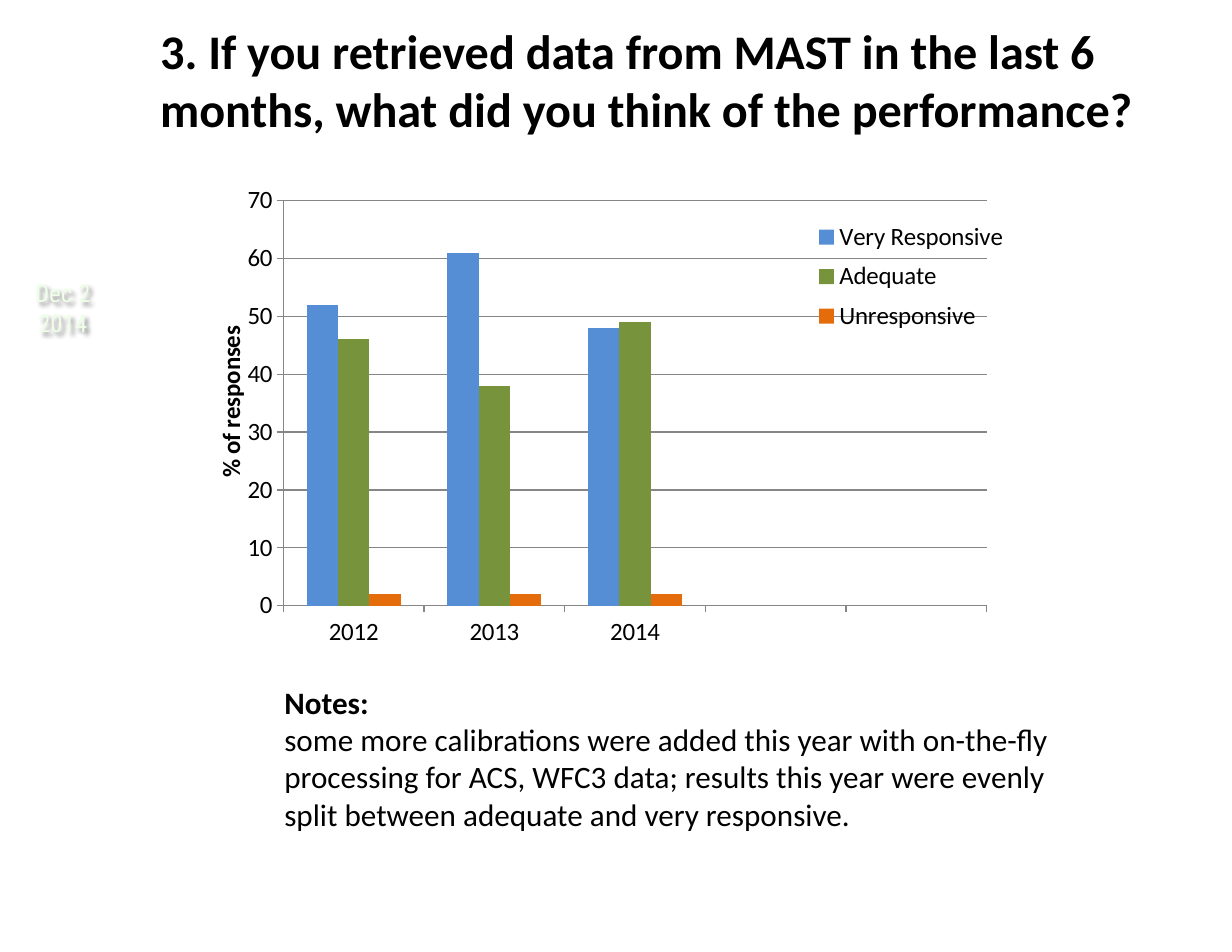
from lxml.etree import SubElement
from pptx import Presentation
from pptx.chart.data import CategoryChartData
from pptx.dml.color import RGBColor
from pptx.enum.chart import XL_CHART_TYPE, XL_LEGEND_POSITION, XL_TICK_MARK
from pptx.enum.text import MSO_ANCHOR, PP_ALIGN
from pptx.oxml import parse_xml
from pptx.oxml.ns import nsdecls, qn
from pptx.util import Inches, Pt

TITLE = ("3. If you retrieved data from MAST in the last 6 months, "
         "what did you think of the performance?")
DATE = "Dec 2 2014"
NOTES = [
    ("Notes:", True),
    ("some more calibrations were added this year with on-the-fly processing for "
     "ACS, WFC3 data; results this year were evenly split between adequate and "
     "very responsive.", False),
]
VALUE_TITLE = "% of responses"
YEARS = ["2012", "2013", "2014", "", ""]
RESPONSES = [
    ("Very Responsive", [52, 61, 48, None, None], "very_responsive"),
    ("Adequate", [46, 38, 49, None, None], "adequate"),
    ("Unresponsive", [2, 2, 2, None, None], "unresponsive"),
]

# Boxes in inches: left, top, width, height; chart parts count from the chart.
CHART_BOX = (1.76, 1.5, 7.71, 4.4)
PLOT_BOX = (0.77, 0.29, 6.28, 3.62)
LEGEND_BOX = (5.45, 0.4, 1.85, 1.14)
VALUE_TITLE_PLACE = (0.11, 1.37)

THEME = {
    "font": "Calibri", "date_font": "Roboto Condensed",
    "title_size": 31, "notes_size": 20, "label_size": 16,
    "text": "000000", "date": "EEFFE8", "line": "868686", "shadow": "000000",
    "very_responsive": "558ED5", "adequate": "77933C", "unresponsive": "E46C0A",
}


def color(name):
    return RGBColor.from_string(THEME[name])


def style_font(font, size, bold=False, face="font", ink="text"):
    font.name = THEME[face]
    font.size = Pt(THEME[size])
    font.bold = bold
    font.color.rgb = color(ink)


def add_text(slide, box, paragraphs, size, face="font", ink="text",
             align=PP_ALIGN.LEFT, anchor=MSO_ANCHOR.TOP, insets=(0.1, 0.05)):
    """Add a text box from (text, bold) pairs and return it."""
    shape = slide.shapes.add_textbox(*map(Inches, box))
    frame = shape.text_frame
    frame.word_wrap = True
    frame.vertical_anchor = anchor
    frame.margin_left = frame.margin_right = Inches(insets[0])
    frame.margin_top = frame.margin_bottom = Inches(insets[1])
    frame.text = "\n".join(text for text, _ in paragraphs)
    for paragraph, (_, bold) in zip(frame.paragraphs, paragraphs):
        paragraph.alignment = align
        style_font(paragraph.runs[0].font, size, bold, face, ink)
    return shape


def add_shadow(shape):
    """Give an unfilled text box a soft shadow, which falls from its letters."""
    shape._element.spPr.append(parse_xml(
        f'<a:effectLst {nsdecls("a")}><a:outerShdw blurRad="38100" dist="38100" '
        f'dir="2700000"><a:srgbClr val="{THEME["shadow"]}"><a:alpha val="43000"/>'
        '</a:srgbClr></a:outerShdw></a:effectLst>'))


def set_layout(element, after, box, inner=False):
    """Place a chart part by its box, as fractions of the chart's size."""
    for old_layout in element.findall(qn("c:layout")):
        element.remove(old_layout)
    layout = parse_xml(f'<c:layout {nsdecls("c")}><c:manualLayout/></c:layout>')
    settings = [("layoutTarget", "inner")] if inner else []
    settings += [("xMode", "edge"), ("yMode", "edge")]
    settings += [(tag, length / whole) for tag, length, whole
                 in zip("xywh", box, CHART_BOX[2:] * 2)]
    for tag, value in settings:
        SubElement(layout[0], qn(f"c:{tag}")).set("val", str(value))
    if after:
        element.find(qn(after)).addnext(layout)
    else:
        element.insert(0, layout)


def add_response_chart(slide):
    data = CategoryChartData(number_format="0")
    data.categories = YEARS
    for name, values, _ in RESPONSES:
        data.add_series(name, values)
    chart = slide.shapes.add_chart(
        XL_CHART_TYPE.COLUMN_CLUSTERED, *map(Inches, CHART_BOX), data).chart
    chart.has_title = False
    style_font(chart.font, "label_size")

    plot = chart.plots[0]
    plot.gap_width = 150
    plot.overlap = 0
    plot.vary_by_categories = False
    for series, (_, _, ink) in zip(plot.series, RESPONSES):
        series.format.fill.solid()
        series.format.fill.fore_color.rgb = color(ink)

    value_axis = chart.value_axis
    value_axis.minimum_scale, value_axis.maximum_scale = 0, 70
    value_axis.major_unit = 10
    value_axis.major_gridlines.format.line.color.rgb = color("line")
    for axis in (chart.category_axis, value_axis):
        axis.major_tick_mark = XL_TICK_MARK.OUTSIDE
        axis.format.line.color.rgb = color("line")
        style_font(axis.tick_labels.font, "label_size")
    axis_title = value_axis.axis_title
    title_frame = axis_title.text_frame
    title_frame.text = VALUE_TITLE
    title_frame._txBody.bodyPr.set("rot", "-5400000")
    style_font(title_frame.paragraphs[0].runs[0].font, "label_size", bold=True)

    chart.has_legend = True
    legend = chart.legend
    legend.position = XL_LEGEND_POSITION.RIGHT
    legend.include_in_layout = False
    style_font(legend.font, "label_size")

    set_layout(chart._chartSpace.chart.plotArea, None, PLOT_BOX, inner=True)
    set_layout(legend._element, "c:legendPos", LEGEND_BOX)
    set_layout(axis_title._element, "c:tx", VALUE_TITLE_PLACE)


def main():
    presentation = Presentation()
    presentation.slide_width, presentation.slide_height = Inches(11), Inches(8.5)
    slide = presentation.slides.add_slide(presentation.slide_layouts[6])
    date = add_text(slide, (0.04, 2.42, 1.04, 0.65), [(DATE, False)], "label_size",
                    "date_font", "date", PP_ALIGN.CENTER, insets=(0.11, 0.06))
    add_shadow(date)
    add_text(slide, (1.32, 0, 9.13, 1.42), [(TITLE, True)], "title_size",
             anchor=MSO_ANCHOR.MIDDLE, insets=(0.11, 0.06))
    add_response_chart(slide)
    add_text(slide, (2.44, 6.05, 7.51, 1.45), NOTES, "notes_size")
    presentation.save("out.pptx")


if __name__ == "__main__":
    main()
